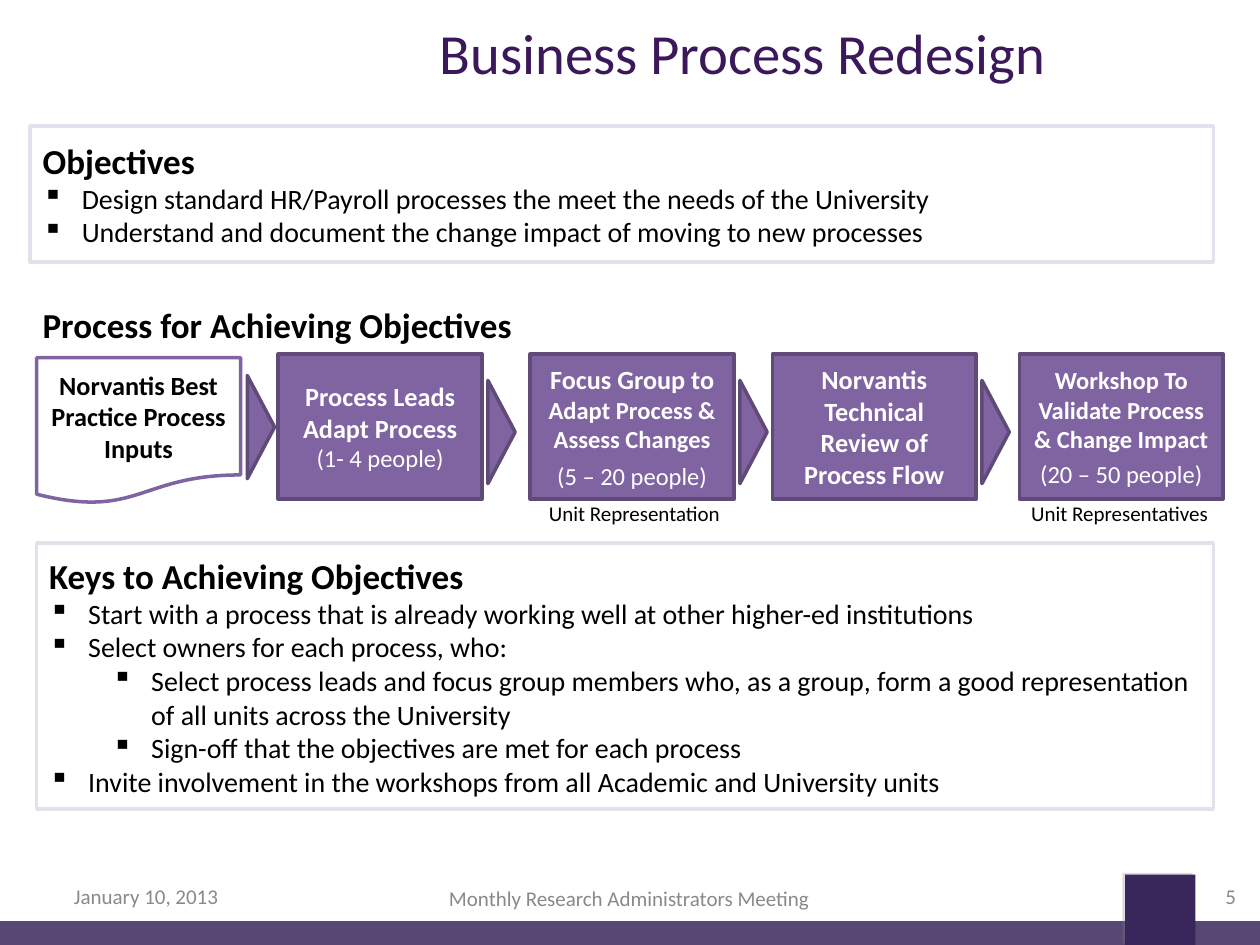
from lxml import etree
from pptx import Presentation
from pptx.dml.color import RGBColor
from pptx.enum.shapes import MSO_SHAPE
from pptx.enum.text import MSO_ANCHOR, MSO_AUTO_SIZE, PP_ALIGN
from pptx.oxml.ns import qn
from pptx.util import Cm, Pt

RECTANGLE = MSO_SHAPE.RECTANGLE
TRIANGLE = MSO_SHAPE.ISOSCELES_TRIANGLE
DOCUMENT = MSO_SHAPE.FLOWCHART_DOCUMENT
TOP, MIDDLE = MSO_ANCHOR.TOP, MSO_ANCHOR.MIDDLE
LEFT, CENTER, RIGHT = PP_ALIGN.LEFT, PP_ALIGN.CENTER, PP_ALIGN.RIGHT
NO_AUTOSIZE = MSO_AUTO_SIZE.NONE

FONT = "Calibri"
BLACK, WHITE, GREY = "000000", "FFFFFF", "898989"
PURPLE, PURPLE_EDGE, PALE, DEEP, TITLE = "8064A2", "5F4A78", "E6E0EC", "39275B", "3B185A"
STEP_WIDTH, STEP_HEIGHT, STEP_TOP = 4.11, 2.92, 7.14

OBJECTIVES = [
    (0, "Design standard HR/Payroll processes the meet the needs of the University"),
    (0, "Understand and document the change impact of moving to new processes"),
]
KEYS = [
    (0, "Start with a process that is already working well at other higher-ed institutions"),
    (0, "Select owners for each process, who:"),
    (1, "Select process leads and focus group members who, as a group, "
        "form a good representation of all units across the University"),
    (1, "Sign-off that the objectives are met for each process"),
    (0, "Invite involvement in the workshops from all Academic and University units"),
]
STEPS = [
    (5.61, [("Process Leads Adapt Process", 15)], "(1- 4 people)", 0),
    (10.69, [("Focus Group to ", 15), ("Adapt Process & Assess Changes", 14)],
     "(5 – 20 people)", 4),
    (15.57, [("Norvantis Technical Review of Process Flow", 15)], None, 0),
    (20.55, [("Workshop To Validate Process & Change Impact", 14)], "(20 – 50 people)", 3),
]
ARROW_CENTERS = [(5.26, 8.61), (10.11, 8.71), (15.19, 8.71), (20.07, 8.71)]


def rgb(color):
    return RGBColor.from_string(color)


def lengths(*values):
    return [Cm(value) for value in values]


def add_figure(slide, kind, box, fill=None, edge=None):
    figure = slide.shapes.add_shape(kind, *lengths(*box))
    figure.shadow.inherit = False
    if fill:
        figure.fill.solid()
        figure.fill.fore_color.rgb = rgb(fill)
    else:
        figure.fill.background()
    if edge:
        figure.line.color.rgb = rgb(edge)
        figure.line.width = Pt(2)
    else:
        figure.line.fill.background()
    return figure


def prepare_frame(shape, anchor):
    frame = shape.text_frame
    frame.word_wrap = True
    frame.auto_size = NO_AUTOSIZE
    frame.vertical_anchor = anchor
    return frame


def write(paragraph, runs, color, bold=False, align=LEFT, level=None, before=0):
    paragraph.alignment = align
    if before:
        paragraph.space_before = Pt(before)
    if level is not None:
        paragraph.level = level
        properties = paragraph._p.get_or_add_pPr()
        properties.set("marL", str(Cm(0.79 + 1.27 * level)))
        properties.set("indent", str(Cm(-0.79)))
        etree.SubElement(properties, qn("a:buChar"), char="▪")
    font = paragraph.font
    font.name = FONT
    font.bold = bold
    font.color.rgb = rgb(color)
    font.size = Pt(runs[0][1])
    for text, size in runs:
        run = paragraph.add_run()
        run.text = text
        if size != runs[0][1]:
            run.font.size = Pt(size)


def add_label(slide, box, text, size, color, align=LEFT, bold=False, anchor=MIDDLE):
    label = slide.shapes.add_textbox(*lengths(*box))
    frame = prepare_frame(label, anchor)
    write(frame.paragraphs[0], [(text, size)], color, bold, align)


def add_panel(slide, box, heading, bullets):
    frame = prepare_frame(add_figure(slide, RECTANGLE, box, edge=PALE), MIDDLE)
    write(frame.paragraphs[0], [(heading, 20)], BLACK, bold=True)
    for level, text in bullets:
        write(frame.add_paragraph(), [(text, 16)], BLACK, level=level)


def add_step(slide, left, activity, people, gap):
    box = (left, STEP_TOP, STEP_WIDTH, STEP_HEIGHT)
    frame = prepare_frame(add_figure(slide, RECTANGLE, box, PURPLE, PURPLE_EDGE), MIDDLE)
    write(frame.paragraphs[0], activity, WHITE, bold=True, align=CENTER)
    if people:
        write(frame.add_paragraph(), [(people, 14)], WHITE, align=CENTER, before=gap)


def add_arrow(slide, center_x, center_y, base=2.08, depth=0.55):
    box = (center_x - base / 2, center_y - depth / 2, base, depth)
    add_figure(slide, TRIANGLE, box, PURPLE, PURPLE_EDGE).rotation = 90


def add_footer_decoration(slide):
    band = add_figure(slide, RECTANGLE, (0, 18.57, 25.4, 0.48), DEEP)
    band_color = band._element.spPr.find(qn("a:solidFill"))[0]
    etree.SubElement(band_color, qn("a:alpha"), val="85000")

    square = add_figure(slide, RECTANGLE, (22.68, 17.63, 1.42, 1.42), DEEP)
    effects = square._element.spPr.find(qn("a:effectLst"))
    shadow = etree.SubElement(effects, qn("a:outerShdw"), blurRad="0",
                              dist=str(Pt(1.8)), dir=str(211 * 60000), rotWithShape="0")
    shadow_color = etree.SubElement(shadow, qn("a:srgbClr"), val="808080")
    etree.SubElement(shadow_color, qn("a:alpha"), val="27000")


def set_title(slide, text):
    title = slide.shapes.title
    title.left, title.top, title.width, title.height = lengths(6.25, 0.2, 17.45, 1.7)
    frame = prepare_frame(title, MIDDLE)
    write(frame.paragraphs[0], [(text, 32.4)], TITLE, align=CENTER)


def add_process(slide):
    add_label(slide, (0.61, 5.99, 10.82, 1.12), "Process for Achieving Objectives",
              20, BLACK, bold=True, anchor=TOP)
    inputs = add_figure(slide, DOCUMENT, (0.74, 7.21, STEP_WIDTH, 2.95), WHITE, PURPLE)
    write(prepare_frame(inputs, MIDDLE).paragraphs[0],
          [("Norvantis Best Practice Process Inputs", 15)], BLACK, bold=True, align=CENTER)
    for step in STEPS:
        add_step(slide, *step)
    for center in ARROW_CENTERS:
        add_arrow(slide, *center)
    for left, caption in [(10.39, "Unit Representation"), (20.17, "Unit Representatives")]:
        add_label(slide, (left, 9.96, 4.8, 0.76), caption, 12, BLACK, CENTER, anchor=TOP)


def main():
    deck = Presentation()
    deck.slide_width, deck.slide_height = lengths(25.4, 19.05)
    slide = deck.slides.add_slide(deck.slide_layouts[5])
    add_footer_decoration(slide)
    set_title(slide, "Business Process Redesign")
    add_panel(slide, (0.74, 10.95, 23.72, 5.36), "Keys to Achieving Objectives", KEYS)
    add_panel(slide, (0.61, 2.54, 23.85, 2.74), "Objectives", OBJECTIVES)
    add_process(slide)
    add_label(slide, (1.24, 17.55, 5.92, 1.02), "January 10, 2013", 12, GREY)
    add_label(slide, (8.66, 17.6, 8.05, 1.02), "Monthly Research Administrators Meeting",
              12, GREY, CENTER)
    add_label(slide, (19.25, 17.55, 5.92, 1.02), "5", 12, GREY, RIGHT)
    deck.save("out.pptx")


if __name__ == "__main__":
    main()
